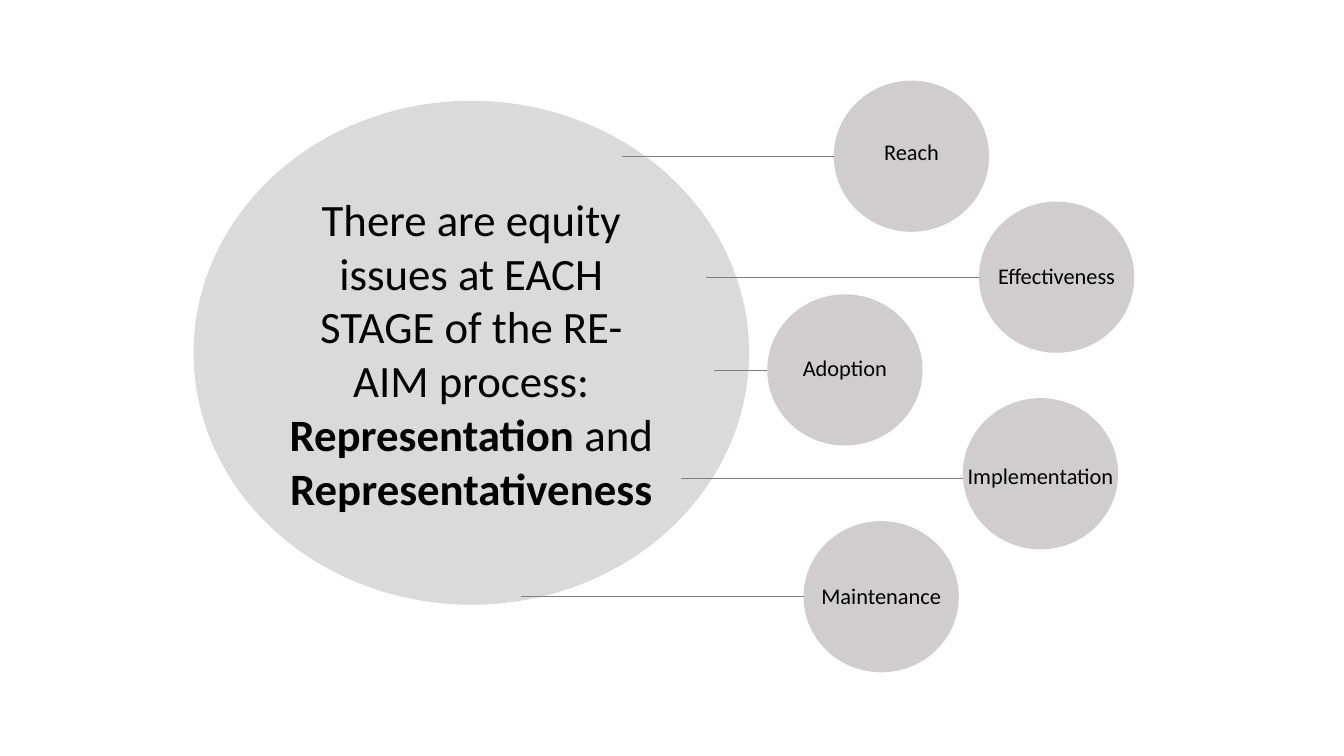
from lxml.etree import SubElement
from pptx import Presentation
from pptx.dml.color import RGBColor
from pptx.enum.shapes import MSO_CONNECTOR, MSO_SHAPE
from pptx.enum.text import MSO_ANCHOR, MSO_AUTO_SIZE, PP_ALIGN
from pptx.oxml.ns import qn
from pptx.util import Inches, Pt

# Content
STATEMENT = [
    ("There are equity issues at EACH STAGE of the RE-AIM process: ", False),
    ("Representation", True),
    (" and ", False),
    ("Representativeness", True),
]
# Stage name, circle left, circle top, line end, line height, label top
STAGES = [
    ("Reach", 8.27, 0.8, 6.17, 1.55, 1.32),
    ("Effectiveness", 9.71, 2, 7, 2.75, 2.55),
    ("Adoption", 7.61, 2.92, 7.08, 3.67, 3.46),
    ("Implementation", 9.55, 3.95, 6.75, 4.75, 4.54),
    ("Maintenance", 7.97, 5.17, 5.17, 5.92, 5.73),
]

# Style
FONT = "Calibri"
BLACK = RGBColor(0, 0, 0)
CIRCLE_GRAY = RGBColor(0xAF, 0xAB, 0xAB)
LINE_GRAY = RGBColor(0x80, 0x80, 0x80)
CIRCLE_WIDTH, CIRCLE_HEIGHT = 1.54, 1.5
LABEL_WIDTH, LABEL_HEIGHT = 1.94, 0.37


def add_circle(slide, left, top, width, height, opacity):
    shape = slide.shapes.add_shape(
        MSO_SHAPE.OVAL, Inches(left), Inches(top), Inches(width), Inches(height))
    shape.shadow.inherit = False
    shape.line.fill.background()
    shape.fill.solid()
    shape.fill.fore_color.rgb = CIRCLE_GRAY
    color = shape.fill._xPr.find(qn("a:solidFill")).find(qn("a:srgbClr"))
    SubElement(color, qn("a:alpha")).set("val", str(opacity * 1000))
    return shape


def add_line(slide, start, end, height):
    line = slide.shapes.add_connector(
        MSO_CONNECTOR.STRAIGHT, Inches(start), Inches(height), Inches(end), Inches(height))
    line.line.color.rgb = LINE_GRAY
    line.line.width = Pt(0.5)
    SubElement(line._element.spPr, qn("a:effectLst"))


def write_centered(text_frame, runs, size):
    text_frame.word_wrap = True
    paragraph = text_frame.paragraphs[0]
    paragraph.alignment = PP_ALIGN.CENTER
    for text, bold in runs:
        run = paragraph.add_run()
        run.text = text
        run.font.name = FONT
        run.font.size = Pt(size)
        run.font.bold = bold
        run.font.color.rgb = BLACK


presentation = Presentation()
presentation.slide_width = Inches(13.33)
presentation.slide_height = Inches(7.5)
slide = presentation.slides.add_slide(presentation.slide_layouts[6])

# Main statement
statement = add_circle(slide, 1.92, 1, 5.51, 5, 44)
statement.text_frame.vertical_anchor = MSO_ANCHOR.MIDDLE
write_centered(statement.text_frame, STATEMENT, 32)

# Stage circles
for name, left, top, line_end, line_height, label_top in STAGES:
    add_circle(slide, left, top, CIRCLE_WIDTH, CIRCLE_HEIGHT, 59)

# Lines back to the statement
for name, left, top, line_end, line_height, label_top in STAGES:
    add_line(slide, left, line_end, line_height)

# Stage labels, centred on their circles
for name, left, top, line_end, line_height, label_top in STAGES:
    label_left = left + (CIRCLE_WIDTH - LABEL_WIDTH) / 2
    label = slide.shapes.add_textbox(
        Inches(label_left), Inches(label_top), Inches(LABEL_WIDTH), Inches(LABEL_HEIGHT))
    label.text_frame.auto_size = MSO_AUTO_SIZE.SHAPE_TO_FIT_TEXT
    write_centered(label.text_frame, [(name, False)], 16)

presentation.save("out.pptx")
